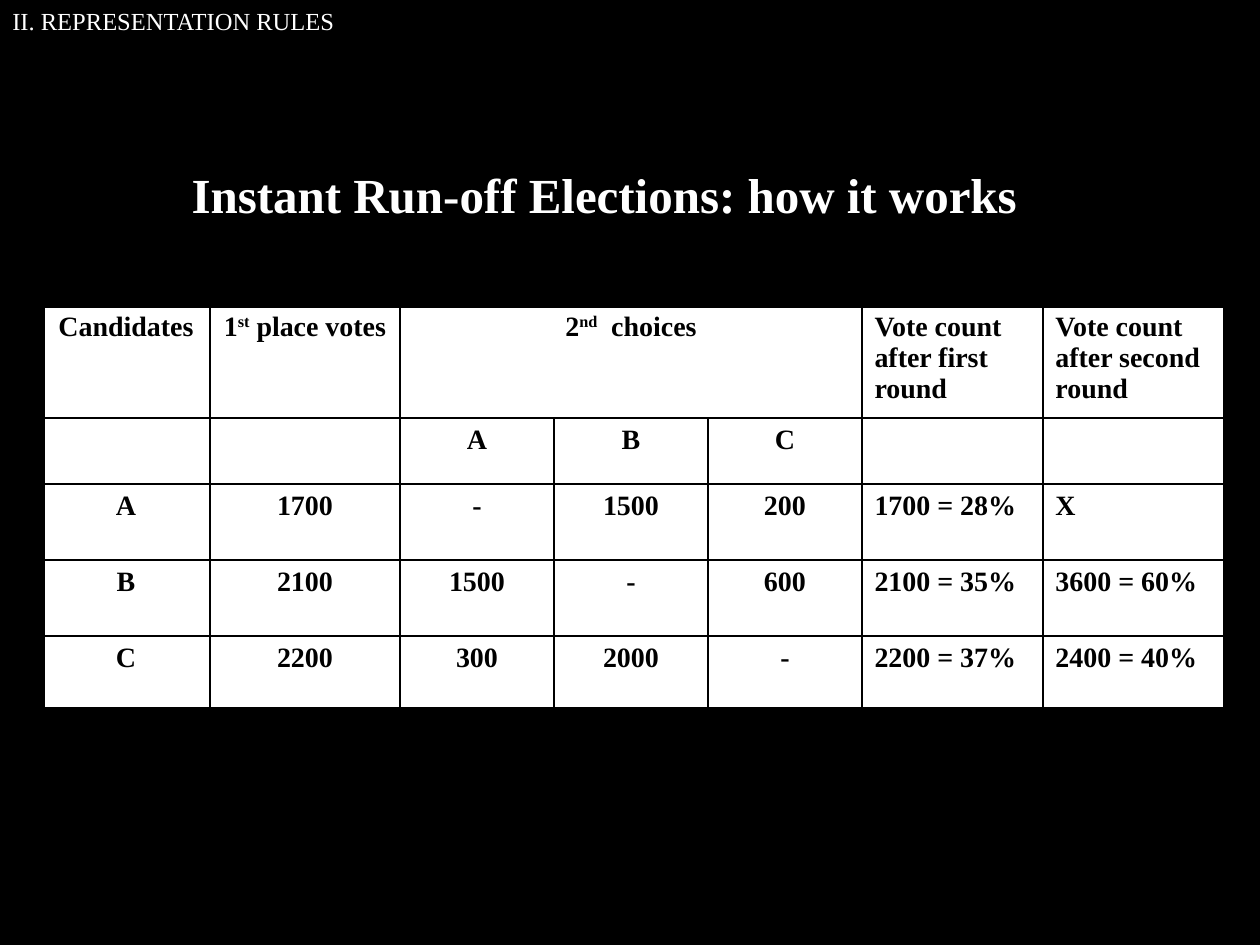
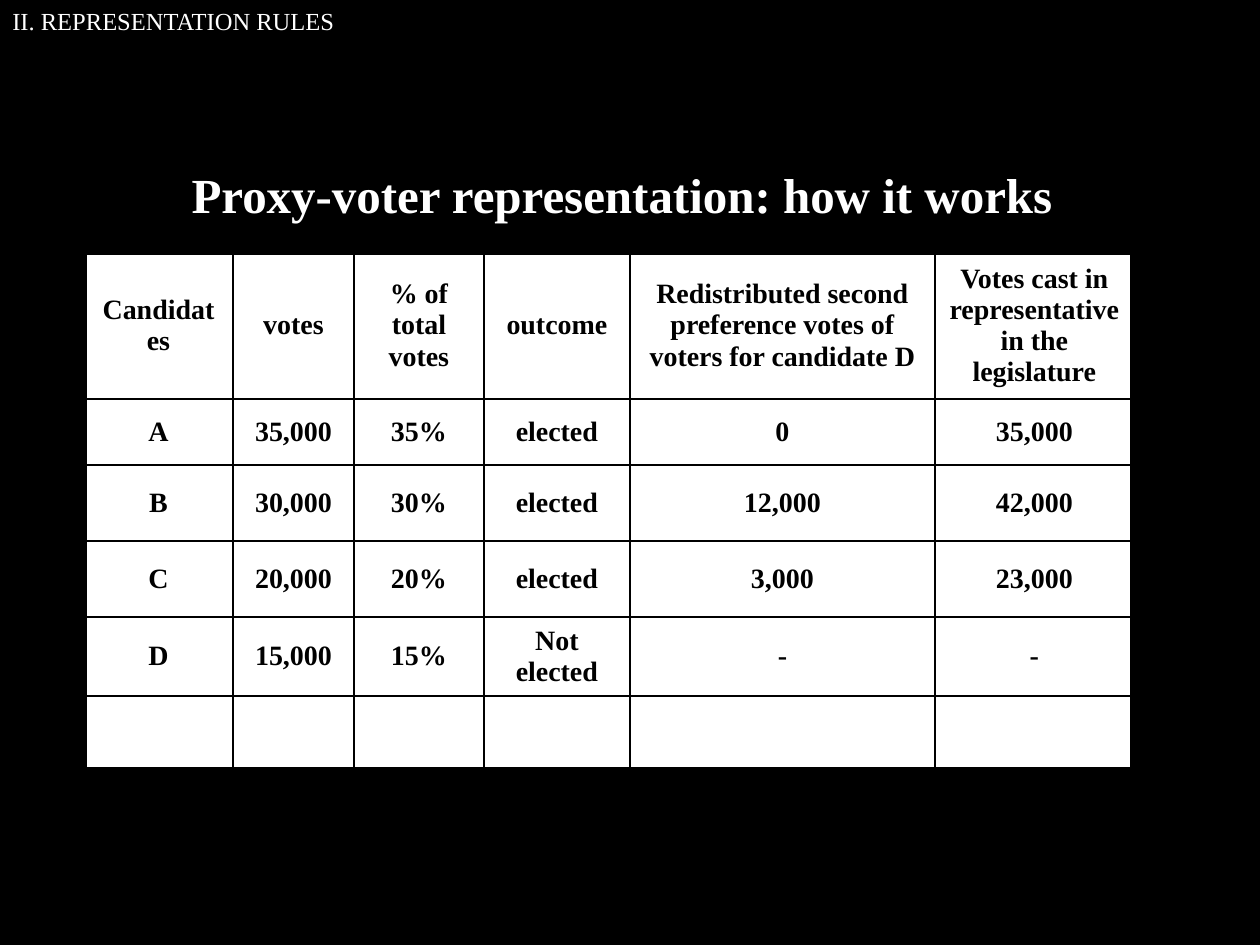
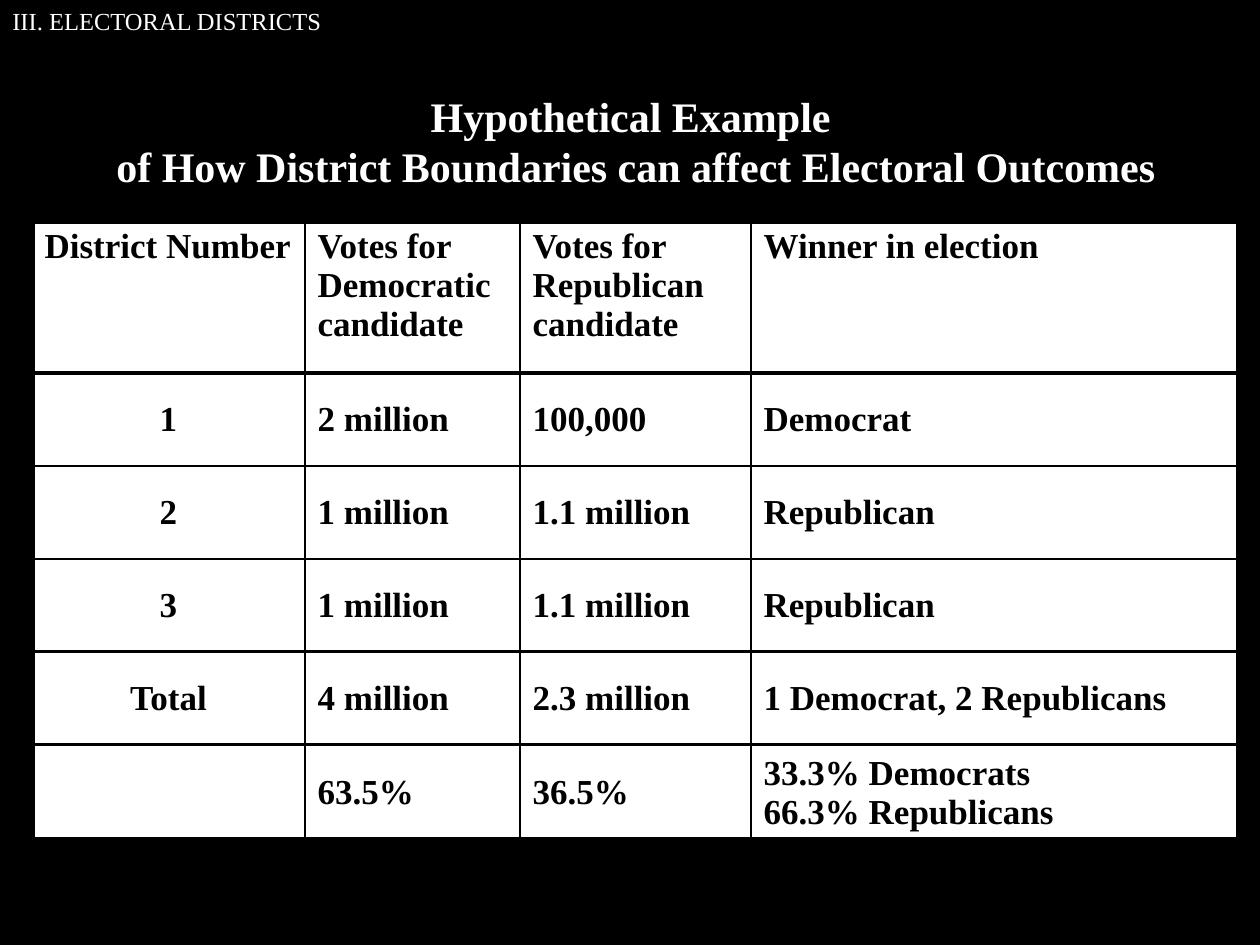
from pptx import Presentation
from pptx.dml.color import RGBColor
from pptx.enum.text import MSO_ANCHOR as Anchor, MSO_AUTO_SIZE as AutoSize, PP_ALIGN as Align
from pptx.oxml import parse_xml
from pptx.oxml.ns import nsdecls
from pptx.util import Emu, Pt

# Shared look
BLACK = RGBColor(0, 0, 0)
WHITE = RGBColor(255, 255, 255)
FONT = "Times New Roman"
EMU_PER_PX = 914400 / 126
SLIDE_SIZE = (1260, 945)
TITLE_BOX = (179, 158, 935, 72)
OUTER, RULE, THIN = 4.5, 2, 1

FRAME_FORMAT = {"word_wrap": True, "auto_size": AutoSize.NONE, "vertical_anchor": Anchor.TOP}
PLAIN_TABLE = {"first_row": False, "horz_banding": False}


def px(length):
    return Emu(round(length * EMU_PER_PX))


def set_all(target, values):
    for key, value in values.items():
        setattr(target, key, value)


def write(frame, text, size, color, bold, align):
    """Fill a text frame; parts between carets become superscript."""
    frame.text = ""
    for number, line in enumerate(text.split("\n")):
        paragraph = frame.add_paragraph() if number else frame.paragraphs[0]
        paragraph.alignment = align
        for index, part in enumerate(line.split("^")):
            run = paragraph.add_run()
            run.text = part
            set_all(run.font, {"name": FONT, "size": Pt(size), "bold": bold})
            run.font.color.rgb = color
            if index % 2:
                run._r.get_or_add_rPr().set("baseline", "30000")


def add_section(slide, name):
    """Running section name in the top left corner."""
    section = slide.shapes.add_textbox(0, 0, px(378), px(42))
    set_all(section.text_frame, FRAME_FORMAT)
    write(section.text_frame, name, 14, WHITE, False, Align.LEFT)


def add_title(slide, text, box, size, align):
    title = slide.shapes.title
    set_all(title, dict(zip(("left", "top", "width", "height"), map(px, box))))
    set_all(title.text_frame, FRAME_FORMAT)
    write(title.text_frame, text, size, WHITE, True, align)


def set_borders(cell, widths):
    """Black borders; widths maps a side (L, R, T, B) to points."""
    properties = cell._tc.get_or_add_tcPr()
    for side, width in widths.items():
        properties.append(parse_xml(
            f'<a:ln{side} {nsdecls("a")} w="{Pt(width)}"><a:solidFill>'
            f'<a:srgbClr val="{BLACK}"/></a:solidFill></a:ln{side}>'))


def add_vote_table(slide, origin, widths, heights, rows, size, align, anchor,
                   ruled=(), merged=None):
    """Votes grid; align and anchor give each cell's setting by row and column."""
    left, top = origin
    votes = slide.shapes.add_table(
        len(heights), len(widths), px(left), px(top), px(sum(widths)), px(sum(heights))).table
    set_all(votes, PLAIN_TABLE)
    for column, width in zip(votes.columns, widths):
        column.width = px(width)
    for row, height in zip(votes.rows, heights):
        row.height = px(height)

    def row_line(edge):
        if edge in (0, len(heights)):
            return OUTER
        return RULE if edge in ruled else THIN

    def column_line(edge):
        return OUTER if edge in (0, len(widths)) else THIN

    for r, texts in enumerate(rows):
        for c, text in enumerate(texts):
            cell = votes.cell(r, c)
            set_borders(cell, {"L": column_line(c), "R": column_line(c + 1),
                               "T": row_line(r), "B": row_line(r + 1)})
            cell.fill.solid()
            cell.fill.fore_color.rgb = WHITE
            cell.vertical_anchor = anchor(r, c)
            if text:
                write(cell.text_frame, text, size, BLACK, True, align(r, c))
    if merged:
        start, end = merged
        votes.cell(*start).merge(votes.cell(*end))


def add_table_slide(deck, section, title, table, title_box=TITLE_BOX,
                    title_size=28, title_align=Align.LEFT):
    slide = deck.slides.add_slide(deck.slide_layouts[5])
    add_vote_table(slide, **table)
    add_title(slide, title, title_box, title_size, title_align)
    add_section(slide, section)


RUNOFF = {
    "origin": (42, 305),
    "widths": [168, 190, 154, 154, 154, 181, 184],
    "heights": [113, 66, 76, 76, 75],
    "rows": [
        ["Candidates", "1^st^ place votes", "2^nd^  choices", "", "",
         "Vote count after first round", "Vote count after second round"],
        ["", "", "A", "B", "C", "", ""],
        ["A", "1700", "-", "1500", "200", "1700 = 28%", "X"],
        ["B", "2100", "1500", "-", "600", "2100 = 35%", "3600 = 60%"],
        ["C", "2200", "300", "2000", "-", "2200 = 37%", "2400 = 40%"],
    ],
    "size": 16,
    "align": lambda r, c: Align.CENTER if c < 5 else Align.LEFT,
    "anchor": lambda r, c: Anchor.TOP,
    "merged": ((0, 2), (0, 4)),
}

PROXY = {
    "origin": (84, 252),
    "widths": [149, 121, 130, 146, 305, 199],
    "heights": [147, 66, 76, 76, 79, 75],
    "rows": [
        ["Candidates", "votes", "% of total votes", "outcome",
         "Redistributed second preference votes of voters for candidate D",
         "Votes cast in representative in the legislature"],
        ["A", "35,000", "35%", "elected", "0", "35,000"],
        ["B", "30,000", "30%", "elected", "12,000", "42,000"],
        ["C", "20,000", "20%", "elected", "3,000", "23,000"],
        ["D", "15,000", "15%", "Not elected", "-", "-"],
        [""] * 6,
    ],
    "size": 16,
    "align": lambda r, c: Align.CENTER,
    "anchor": lambda r, c: Anchor.MIDDLE,
}

DISTRICTS = {
    "origin": (32, 221),
    "widths": [273, 215, 231, 489],
    "heights": [152, 93, 93, 93, 93, 96],
    "rows": [
        ["District Number", "Votes for Democratic candidate",
         "Votes for Republican candidate", "Winner in election"],
        ["1", "2 million", "100,000", "Democrat"],
        ["2", "1 million", "1.1 million", "Republican"],
        ["3", "1 million", "1.1 million", "Republican"],
        ["Total", "4 million", "2.3 million", "1 Democrat, 2 Republicans"],
        ["", "63.5%", "36.5%", "33.3% Democrats\n66.3% Republicans"],
    ],
    "size": 20,
    "align": lambda r, c: Align.CENTER if r and c == 0 else Align.LEFT,
    "anchor": lambda r, c: Anchor.MIDDLE if r else Anchor.TOP,
    "ruled": (1, 4, 5),
}


def main():
    deck = Presentation()
    deck.slide_width, deck.slide_height = map(px, SLIDE_SIZE)
    backdrop = deck.slide_master.background.fill
    backdrop.solid()
    backdrop.fore_color.rgb = BLACK

    rules = "II. REPRESENTATION RULES"
    add_table_slide(deck, rules, "Instant Run-off Elections: how it works", RUNOFF)
    add_table_slide(deck, rules, "Proxy-voter representation: how it works", PROXY)
    add_table_slide(
        deck, "III. ELECTORAL DISTRICTS",
        "Hypothetical Example \nof How District Boundaries can affect Electoral Outcomes",
        DISTRICTS, title_box=(53, 84, 1166, 115), title_size=24, title_align=Align.CENTER)
    deck.save("out.pptx")


if __name__ == "__main__":
    main()
